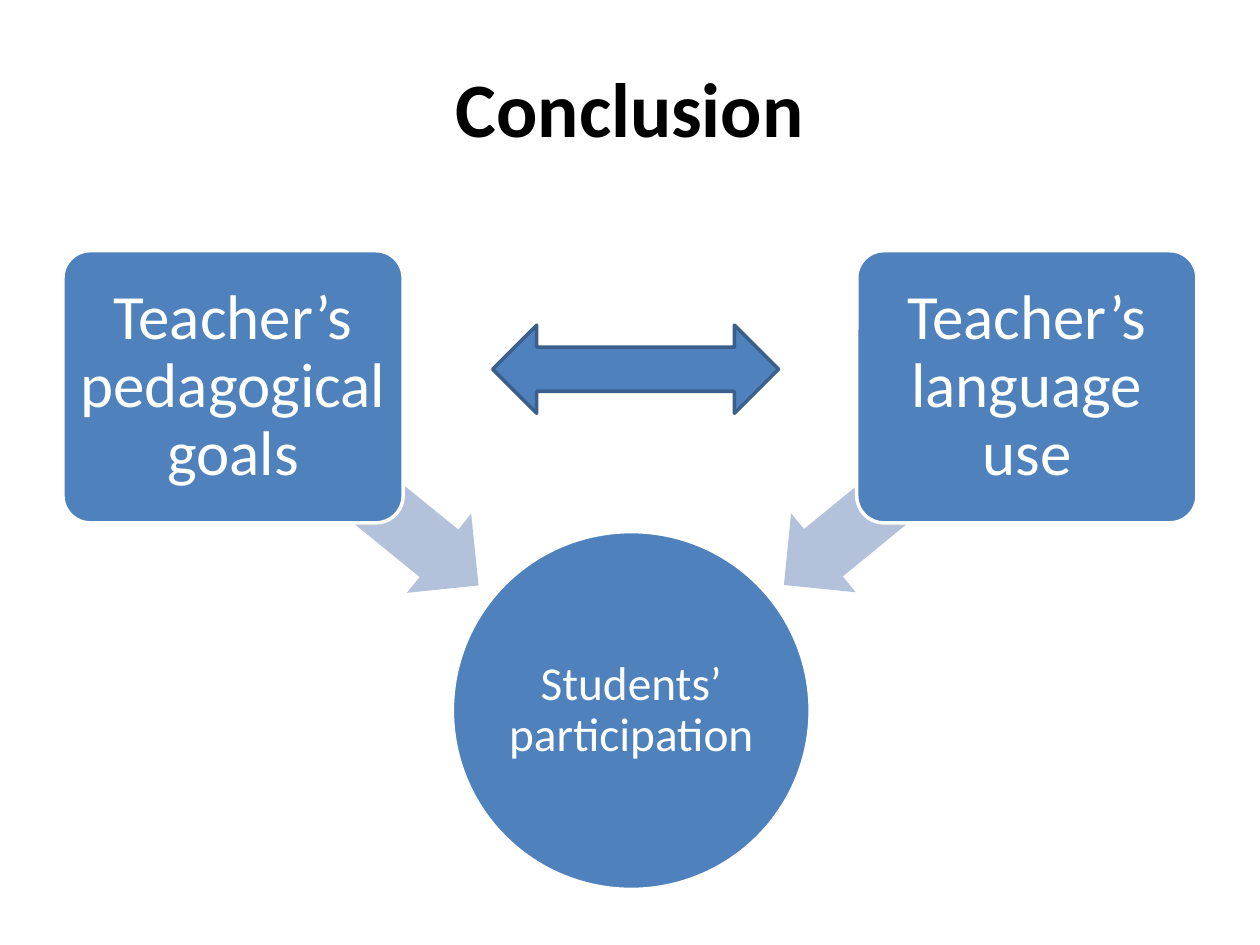
from pptx import Presentation
from pptx.dml.color import RGBColor
from pptx.enum.shapes import MSO_SHAPE as Shape
from pptx.enum.text import MSO_ANCHOR as Anchor, PP_ALIGN as Align
from pptx.util import Pt

COLORS = {"blue": "4F81BD", "edge": "3A5F8C", "pale": "B3C1DB", "white": "FFFFFF", "black": "000000"}


def add_block(kind, box, fill, line=None, adjustments=(), rotation=0):
    shape = slide.shapes.add_shape(kind, *map(Pt, box))
    shape.shadow.inherit = False
    shape.rotation = rotation
    shape.fill.solid()
    shape.fill.fore_color.rgb = RGBColor.from_string(COLORS[fill])
    if line:
        shape.line.color.rgb = RGBColor.from_string(COLORS[line])
        shape.line.width = Pt(2)
    else:
        shape.line.fill.background()
    for index, value in enumerate(adjustments):
        shape.adjustments[index] = value
    return shape


def write_text(shape, text, size, color, margin, spacing=1.0, bold=False):
    frame = shape.text_frame
    frame_format = {"word_wrap": True, "vertical_anchor": Anchor.MIDDLE}
    for side in ("left", "top", "right", "bottom"):
        frame_format[f"margin_{side}"] = Pt(margin)
    for name, value in frame_format.items():
        setattr(frame, name, value)
    paragraph = frame.paragraphs[0]
    paragraph.alignment = Align.CENTER
    paragraph.line_spacing = spacing
    run = paragraph.add_run()
    run.text = text
    for name, value in {"name": "Calibri", "size": Pt(size), "bold": bold}.items():
        setattr(run.font, name, value)
    run.font.color.rgb = RGBColor.from_string(COLORS[color])


presentation = Presentation()
presentation.slide_width, presentation.slide_height = Pt(720), Pt(540)
slide = presentation.slides.add_slide(presentation.slide_layouts[6])

title = slide.shapes.add_textbox(Pt(36), Pt(21.6), Pt(648), Pt(78.5))
write_text(title, "Conclusion", 44, "black", 3.6, bold=True)

circle = add_block(Shape.OVAL, (258.5, 303.8, 204.5, 204.5), "blue", "white")
write_text(circle, "Students’ participation", 27, "white", 1.5, 0.9)

causes = [
    ("Teacher’s pedagogical goals", 36, 113, 180.7, 219.1),
    ("Teacher’s language use", 489.6, 427.7, 179.3, 320.7),
]
for text, box_left, arrow_left, arrow_width, rotation in causes:
    add_block(Shape.LEFT_ARROW, (arrow_left, 248.4, arrow_width, 58.3), "pale",
              adjustments=(0.6, 0.5), rotation=rotation)
    box = add_block(Shape.ROUNDED_RECTANGLE, (box_left, 143.3, 194.4, 155.5), "blue", "white", (0.1,))
    write_text(box, text, 36, "white", 5, 0.9)

add_block(Shape.LEFT_RIGHT_ARROW, (281.5, 185.8, 163.4, 50.4), "blue", "edge")

presentation.save("out.pptx")
